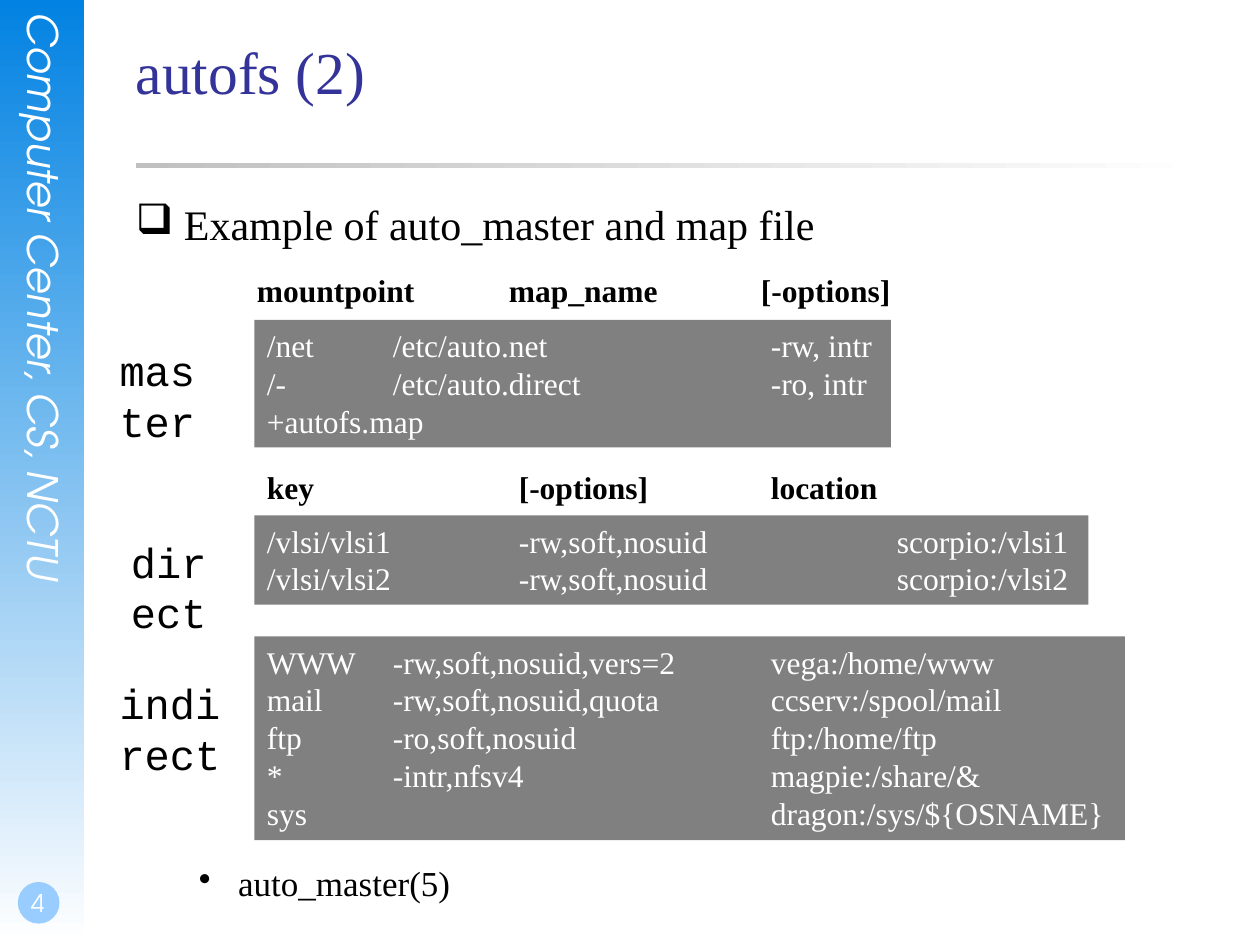
from lxml import etree
from pptx import Presentation
from pptx.dml.color import RGBColor
from pptx.enum import shapes, text
from pptx.oxml import ns
from pptx.util import Cm, Pt

SERIF, MONO, SANS = "Times New Roman", "Courier New", "TeX Gyre Adventor"
WHITE, BLACK, GREY = "FFFFFF", "000000", "808080"
TAB = 2.54  # one tab column, in cm

# Content: positions are left, top, width, height in cm
TITLE = "autofs (2)"
SIDE_TEXT = "Computer Center, CS, NCTU"
PAGE_NUMBER = "4"

# text, size, bullet, left margin, hanging indent, space before (pt)
BULLETS = [
    ("Example of auto_master and map file", 24, "❑", 0.97, 0.97, 0),
    ("auto_master(5)", 20, "•", 2.06, 0.79, 350),
]

# position, tab columns, heading cells
HEADINGS = [
    ((4.93, 5.33, 13.4, 1.02), (2, 4), ("mountpoint", "map_name", "[-options]")),
    ((5.13, 9.32, 13.4, 1.02), (2, 4), ("key", "[-options]", "location")),
]

# position, tab columns, rows
MAPS = [
    ((5.13, 6.45, 12.83, 2.57), (1, 4), [
        ("/net", "/etc/auto.net", "-rw, intr"),
        ("/-", "/etc/auto.direct", "-ro, intr"),
        ("+autofs.map",),
    ]),
    ((5.13, 12.83, 17.55, 4.11), (1, 4), [
        ("WWW", "-rw,soft,nosuid,vers=2", "vega:/home/www"),
        ("mail", "-rw,soft,nosuid,quota", "ccserv:/spool/mail"),
        ("ftp", "-ro,soft,nosuid", "ftp:/home/ftp"),
        ("*", "-intr,nfsv4", "magpie:/share/&"),
        ("sys", "", "dragon:/sys/${OSNAME}"),
    ]),
    ((5.13, 10.39, 16.81, 1.8), (2, 5), [
        ("/vlsi/vlsi1", "-rw,soft,nosuid", "scorpio:/vlsi1"),
        ("/vlsi/vlsi2", "-rw,soft,nosuid", "scorpio:/vlsi2"),
    ]),
]

MAP_NAMES = [
    ("master", (2.16, 6.83, 2.46, 1.27)),
    ("indirect", (2.16, 13.54, 2.77, 1.27)),
    ("direct", (2.39, 10.69, 2.18, 1.27)),
]


def rgb(value):
    return RGBColor.from_string(value)


def lengths(position):
    return [Cm(value) for value in position]


def add_panel(slide, kind, position, colours, angle=0):
    """Add a borderless shape, solid for one colour and graded for two."""
    panel = slide.shapes.add_shape(kind, *lengths(position))
    panel.shadow.inherit = False
    panel.line.fill.background()
    if len(colours) == 1:
        panel.fill.solid()
        panel.fill.fore_color.rgb = rgb(colours[0])
    else:
        panel.fill.gradient()
        panel.fill.gradient_angle = angle
        for stop, colour in zip(panel.fill.gradient_stops, colours):
            stop.color.rgb = rgb(colour)
    return panel


def set_frame(shape, margins=None):
    frame = shape.text_frame
    frame.word_wrap = True
    frame.auto_size = text.MSO_AUTO_SIZE.NONE
    frame.vertical_anchor = text.MSO_ANCHOR.TOP
    if margins:
        (frame.margin_left, frame.margin_top,
         frame.margin_right, frame.margin_bottom) = lengths(margins)
    return frame


def add_text_area(slide, position, margins=None):
    return set_frame(slide.shapes.add_textbox(*lengths(position)), margins)


def write(frame, lines, size, font, colour, bold=False, italic=False,
          align=text.PP_ALIGN.LEFT, tabs=()):
    """Write one paragraph for each line, with left tab stops."""
    for number, line in enumerate(lines):
        paragraph = frame.add_paragraph() if number else frame.paragraphs[0]
        paragraph.alignment = align
        if tabs:
            stops = etree.SubElement(paragraph._p.get_or_add_pPr(), ns.qn("a:tabLst"))
            for column in tabs:
                etree.SubElement(stops, ns.qn("a:tab"),
                                 pos=str(Cm(column * TAB)), algn="l")
        run = paragraph.add_run()
        run.text = line
        run.font.size = Pt(size)
        run.font.name = font
        run.font.bold = bold
        run.font.italic = italic
        run.font.color.rgb = rgb(colour)


def add_bullet(frame, number, line, size, mark, left, hanging, before):
    paragraph = frame.add_paragraph() if number else frame.paragraphs[0]
    paragraph.space_before = Pt(before)
    properties = paragraph._p.get_or_add_pPr()
    properties.set("marL", str(Cm(left)))
    properties.set("indent", str(-Cm(hanging)))
    etree.SubElement(properties, ns.qn("a:buChar"), char=mark)
    run = paragraph.add_run()
    run.text = line
    run.font.size = Pt(size)
    run.font.name = SERIF
    run.font.color.rgb = rgb(BLACK)


def main():
    deck = Presentation()
    deck.slide_width, deck.slide_height = Cm(25.4), Cm(19.05)
    slide = deck.slides.add_slide(deck.slide_layouts[5])
    rectangle, oval = shapes.MSO_SHAPE.RECTANGLE, shapes.MSO_SHAPE.OVAL

    # Sidebar with vertical text and page number
    add_panel(slide, rectangle, (0, 0, 1.7, 19.05), ("0282E2", WHITE), 270)
    side = add_text_area(slide, (0.38, 0.25, 1.02, 12.98), (0, 0, 0, 0))
    side._txBody.bodyPr.set("vert", "eaVert")
    write(side, [SIDE_TEXT], 24, SANS, WHITE, italic=True)
    add_panel(slide, oval, (0.36, 17.78, 0.84, 0.84), ("99CCFF",))
    page = add_text_area(slide, (0, 17.35, 1.47, 1.27), (0.05, 0, 0, 0.13))
    page.vertical_anchor = text.MSO_ANCHOR.BOTTOM
    write(page, [PAGE_NUMBER], 14, SANS, WHITE, align=text.PP_ALIGN.CENTER)

    # Title and the rule below it
    add_panel(slide, rectangle, (2.74, 3.28, 21.59, 0.1), ("C0C0C0", WHITE))
    title = slide.shapes.title
    title.left, title.top, title.width, title.height = lengths((2.74, 0.71, 21.59, 3.18))
    write(set_frame(title, (0, 0, 0, 0)), [TITLE], 34, SERIF, "333399")

    # Bullets above and below the maps
    body = add_text_area(slide, (2.74, 4.01, 21.59, 12.9), (0, 0, 0, 0))
    for number, bullet in enumerate(BULLETS):
        add_bullet(body, number, *bullet)

    # Map files, their names and column headings
    for position, tabs, rows in MAPS:
        map_file = set_frame(add_panel(slide, rectangle, position, (GREY,)))
        write(map_file, ["\t".join(row) for row in rows], 18, SERIF, WHITE, tabs=tabs)
    for name, position in MAP_NAMES:
        write(add_text_area(slide, position), [name], 24, MONO, BLACK)
    for position, tabs, cells in HEADINGS:
        write(add_text_area(slide, position), ["\t".join(cells)], 18, SERIF, BLACK,
              bold=True, tabs=tabs)

    deck.save("out.pptx")


if __name__ == "__main__":
    main()
